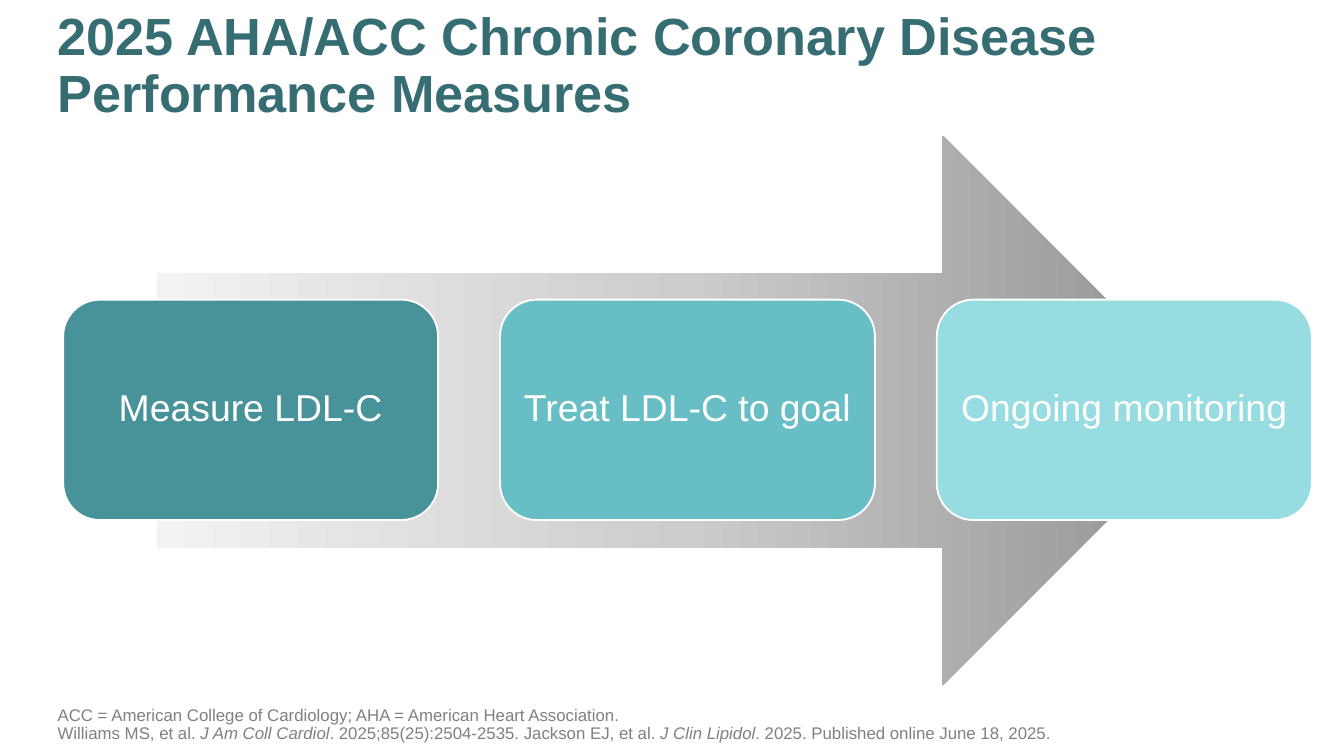
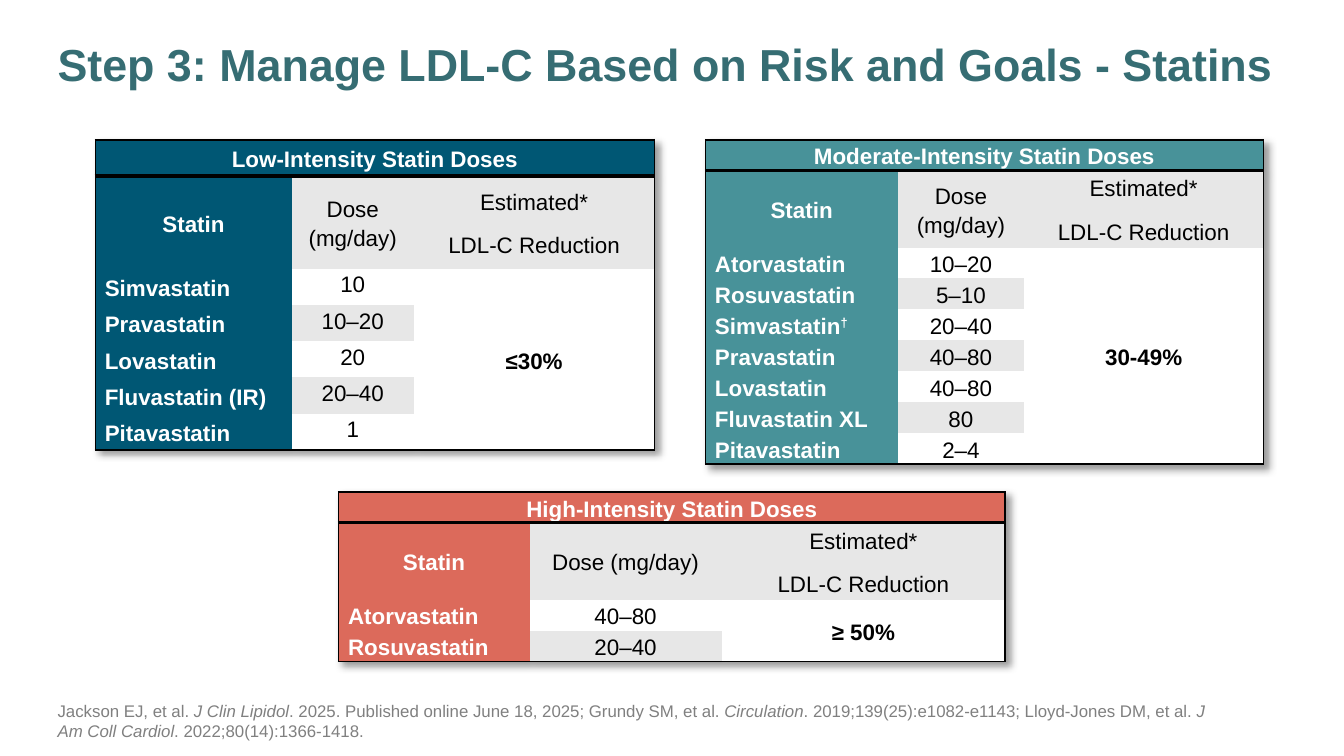
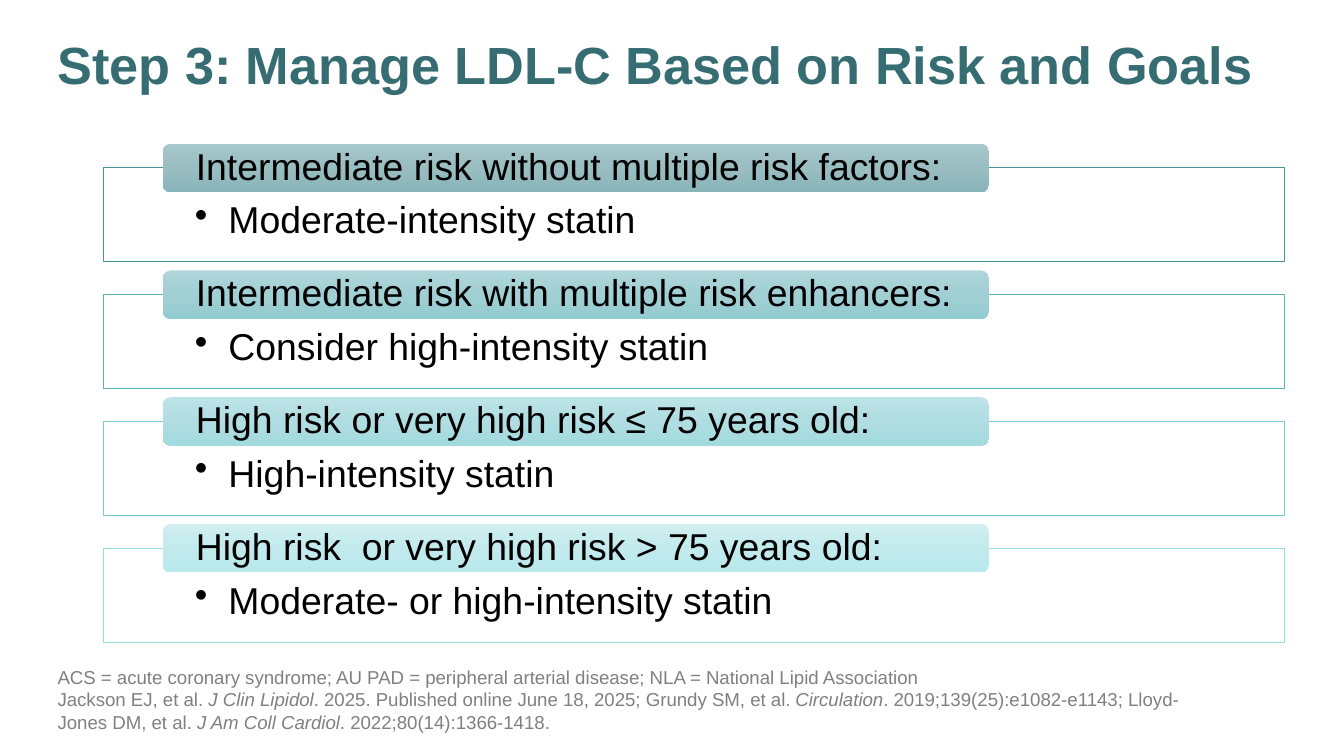
from lxml import etree
from pptx import Presentation
from pptx import util as u
from pptx.dml.color import RGBColor
from pptx.enum import shapes, text
from pptx.oxml.ns import qn

# Shared style
FONT = "Arial"
TITLE, GREY, BLACK, WHITE, BAND = "366D73", "808080", "000000", "FFFFFF", "E7E7E7"
TEALS = ["489299", "67BFC5", "97DCE0"]
PLAIN_STYLE = "{2D5ABB26-0587-4C30-8999-92F81FD0307C}"
MID, TOP = text.MSO_ANCHOR.MIDDLE, text.MSO_ANCHOR.TOP
LEFT, CENTER = text.PP_ALIGN.LEFT, text.PP_ALIGN.CENTER
FORM = shapes.MSO_SHAPE

CITES = ("Jackson EJ, et al. _J Clin Lipidol_. 2025. Published online June 18, 2025; "
         "Grundy SM, et al. _Circulation_. 2019;139(25):e1082-e1143; "
         "Lloyd-Jones DM, et al. _J Am Coll Cardiol_. 2022;80(14):1366-1418.")


def rgb(code):
    return RGBColor.from_string(code)


def add(parent, tag, **attrs):
    return etree.SubElement(parent, qn(tag), {k: str(v) for k, v in attrs.items()})


class Deck:
    """Style and current slide; lengths are cells of a grid 100 columns wide."""

    def __init__(self):
        self.prs = Presentation()
        self.prs.slide_width, self.prs.slide_height = u.Inches(10), u.Inches(5.625)
        self.unit = self.prs.slide_width / 100
        self.slide = None

    def span(self, *cells):
        return [u.Emu(round(c * self.unit)) for c in cells]

    def page(self, title, size, notes, row, small, lead=1.0, lift=0):
        self.slide = self.prs.slides.add_slide(self.prs.slide_layouts[6])
        self.label((3.3, 0.1, 96.7, 9.8), [title], size, TITLE, bold=True, lead=0.9)
        self.label((3.3, row, 87.9, 3.3), notes, small, GREY, lead=lead, lift=lift)

    def settle(self, host, pads, anchor=MID):
        (host.margin_left, host.margin_top,
         host.margin_right, host.margin_bottom) = self.span(*pads)
        host.vertical_anchor = anchor

    def fill_in(self, frame, lines, size, color, bold=False, align=LEFT, lead=0.9,
                after=0, bullet=False):
        """Pieces between underscores are italic; a dagger is raised."""
        frame.word_wrap = True
        frame.text = "\n".join(lines)
        for para, line in zip(frame.paragraphs, lines):
            para.text = ""
            if bullet:
                para.level = 1
                props = para._p.get_or_add_pPr()
                step = round(2.5 * self.unit)
                props.set("marL", str(step))
                props.set("indent", str(-step))
                add(props, "a:buChar", char="•")
            para.alignment, para.line_spacing = align, lead
            para.space_before, para.space_after = u.Pt(0), u.Pt(after)
            for i, piece in enumerate(line.split("_")):
                if not piece:
                    continue
                run = para.add_run()
                run.text = piece
                font = run.font
                font.name, font.size, font.bold = FONT, u.Pt(size), bold
                font.color.rgb = rgb(color)
                if piece == "†":
                    run._r.get_or_add_rPr().set("baseline", "30000")
                else:
                    font.italic = i % 2 == 1

    def label(self, box, lines, size, color, lift=0, **style):
        frame = self.slide.shapes.add_textbox(*self.span(*box)).text_frame
        self.settle(frame, (1, 0.5, 1, 0.5 + lift))
        self.fill_in(frame, lines, size, color, **style)

    def shape(self, form, box, fill, line=None, width=1, angle=0, alpha=None):
        item = self.slide.shapes.add_shape(form, *self.span(*box))
        item.shadow.inherit = False
        if isinstance(fill, list):
            item.fill.gradient()
            item.fill.gradient_angle = 360 - angle
            stops = item._element.spPr.find(".//" + qn("a:gsLst"))
            stops.clear()
            for i, code in enumerate(fill):
                stop = add(stops, "a:gs", pos=i * 50000)
                add(stop, "a:srgbClr", val=code)
        else:
            item.fill.solid()
            item.fill.fore_color.rgb = rgb(fill)
            if alpha:
                tint = item._element.spPr.find(".//" + qn("a:srgbClr"))
                add(tint, "a:alpha", val=alpha * 1000)
        if line:
            item.line.color.rgb, item.line.width = rgb(line), u.Pt(width)
        else:
            item.line.fill.background()
        return item

    def edge(self, cell, sides):
        props = cell._tc.get_or_add_tcPr()
        lines = []
        for side in "LRTB":
            width = sides.get(side, 0)
            line = etree.Element(qn("a:ln" + side), w=str(u.Pt(width)))
            if width:
                add(add(line, "a:solidFill"), "a:srgbClr", val=BLACK)
            else:
                add(line, "a:noFill")
            lines.append(line)
        props[:0] = lines

    def doses(self, box, cols, head, row, color, title, drugs, effect, anchor=MID):
        count = len(drugs) + 2
        holder = self.slide.shapes.add_table(count, 3, *self.span(*box))
        table = holder.table
        table.first_row = table.horz_banding = False
        props = table._tbl.tblPr
        props.find(qn("a:tableStyleId")).text = PLAIN_STYLE
        glow = etree.Element(qn("a:effectLst"))
        cast = add(glow, "a:outerShdw", blurRad=50800, dist=38100, dir=2700000, algn="tl")
        add(add(cast, "a:srgbClr", val=BLACK), "a:alpha", val=40000)
        props.insert(0, glow)
        for col, wide in zip(table.columns, self.span(*cols)):
            col.width = wide
        for i, line in enumerate(table.rows):
            line.height = self.span(head if i == 1 else row)[0]
        holder.height = self.span(box[3])[0]

        table.cell(0, 0).merge(table.cell(0, 2))
        table.cell(2, 2).merge(table.cell(count - 1, 2))
        words = [[title, "", ""],
                 ["Statin", "Dose (mg/day)", "Estimated*\nLDL-C Reduction"]]
        words += [[name, dose, ""] for name, dose in drugs]
        words[2][2] = effect
        for r, line in enumerate(words):
            for c, word in enumerate(line):
                cell = table.cell(r, c)
                named = r == 0 or c == 0
                shade = BAND if r == 1 or (c == 1 and r % 2) else WHITE
                cell.fill.solid()
                cell.fill.fore_color.rgb = rgb(color if named else shade)
                self.settle(cell, (0.7, 0, 0.7, 0), anchor if c == 1 and r > 1 else MID)
                sides = {}
                if c == 0:
                    sides["L"] = 1
                if c + cell.span_width == 3 or c == 2:
                    sides["R"] = 1
                if r == 0:
                    sides.update(T=1, B=2)
                elif r + cell.span_height == count:
                    sides["B"] = 1
                self.edge(cell, sides)
                if word:
                    self.fill_in(cell.text_frame, word.split("\n"), 12,
                                 WHITE if named else BLACK,
                                 bold=named or (c == 2 and r > 1),
                                 align=LEFT if c == 0 and r > 1 else CENTER,
                                 lead=1.15, after=8)

    def card(self, box, word, fill):
        item = self.shape(FORM.ROUNDED_RECTANGLE, box, fill, WHITE)
        self.settle(item.text_frame, [0.8] * 4)
        self.fill_in(item.text_frame, [word], 20, WHITE, align=CENTER)

    def advice(self, row, risk, drug, line, blend):
        body = self.shape(FORM.RECTANGLE, (7.7, row, 87.9, 7), WHITE, line, 0.5, alpha=90)
        self.settle(body.text_frame, (6.8, 2.5, 6.8, 1.6), TOP)
        self.fill_in(body.text_frame, [drug], 20, BLACK, bullet=True)
        pill = self.shape(FORM.ROUNDED_RECTANGLE, (12.1, row - 1.8, 61.5, 3.6),
                          blend, angle=90)
        self.settle(pill.text_frame, (2.3, 0, 2.3, 0))
        self.fill_in(pill.text_frame, [risk], 20, BLACK)


def main():
    deck = Deck()

    # Slide 1: three measures on an arrow
    deck.page("2025 AHA/ACC Chronic Coronary Disease Performance Measures", 28,
              ["ACC = American College of Cardiology; AHA = American Heart Association.",
               "Williams MS, et al. _J Am Coll Cardiol_. 2025;85(25):2504-2535. "
               "Jackson EJ, et al. _J Clin Lipidol_. 2025. Published online June 18, 2025."],
              53, 9, lead=0.9, lift=1.4)
    deck.shape(FORM.RIGHT_ARROW, (11.7, 10.1, 78.9, 40.9),
               ["909090", "CCCCCC", "F2F2F2"], angle=180)
    goals = ["Measure LDL-C", "Treat LDL-C to goal", "Ongoing monitoring"]
    for i, (goal, teal) in enumerate(zip(goals, TEALS)):
        deck.card((4.7 + 32.5 * i, 22.3, 27.9, 16.4), goal, teal)

    # Slide 2: statin doses by intensity
    deck.page("Step 3: Manage LDL-C Based on Risk and Goals - Statins", 24,
              [CITES], 52, 9)
    deck.doses((7.1, 10.4, 41.6, 22.9), (14.6, 9.1, 17.9), 6.9, 2.7, "005774",
               "Low-Intensity Statin Doses",
               [("Simvastatin", "10"), ("Pravastatin", "10–20"), ("Lovastatin", "20"),
                ("Fluvastatin (IR)", "20–40"), ("Pitavastatin", "1")], "≤30%", TOP)
    deck.doses((52.5, 10.4, 41.6, 22.9), (14.3, 9.4, 17.8), 4.6, 1.8, TEALS[0],
               "Moderate-Intensity Statin Doses",
               [("Atorvastatin", "10–20"), ("Rosuvastatin", "5–10"),
                ("Simvastatin_†", "20–40"), ("Pravastatin", "40–80"),
                ("Lovastatin", "40–80"), ("Fluvastatin XL", "80"),
                ("Pitavastatin", "2–4")], "30-49%")
    deck.doses((25.2, 36.6, 49.5, 12.1), (14.2, 14.3, 21.1), 4.6, 1.8, "DC6A5B",
               "High-Intensity Statin Doses",
               [("Atorvastatin", "40–80"), ("Rosuvastatin", "20–40")], "≥ 50%")

    # Slide 3: statin choice by risk
    deck.page("Step 3: Manage LDL-C Based on Risk and Goals", 28,
              ["ACS = acute coronary syndrome; AU PAD = peripheral arterial disease; "
               "NLA = National Lipid Association", CITES], 50.4, 10)
    risks = [
        ("Intermediate risk without multiple risk factors:", "Moderate-intensity statin",
         "489299", ["A6C7CC", "9ABDC1", "88B5BA"]),
        ("Intermediate risk with multiple risk enhancers:", "Consider high-intensity statin",
         "58B3BB", ["AFD6DA", "A1CFD4", "91CBD0"]),
        ("High risk or very high risk ≤ 75 years old:", "High-intensity statin",
         "76C9CF", ["BDE3E7", "AFDDE1", "A2DBDF"]),
        ("High risk  or very high risk > 75 years old:", "Moderate- or high-intensity statin",
         "97DCE0", ["D0EFF1", "C2EAED", "B9E9EC"]),
    ]
    for i, risk in enumerate(risks):
        deck.advice(12.5 + 9.43 * i, *risk)

    deck.prs.save("out.pptx")


if __name__ == "__main__":
    main()
